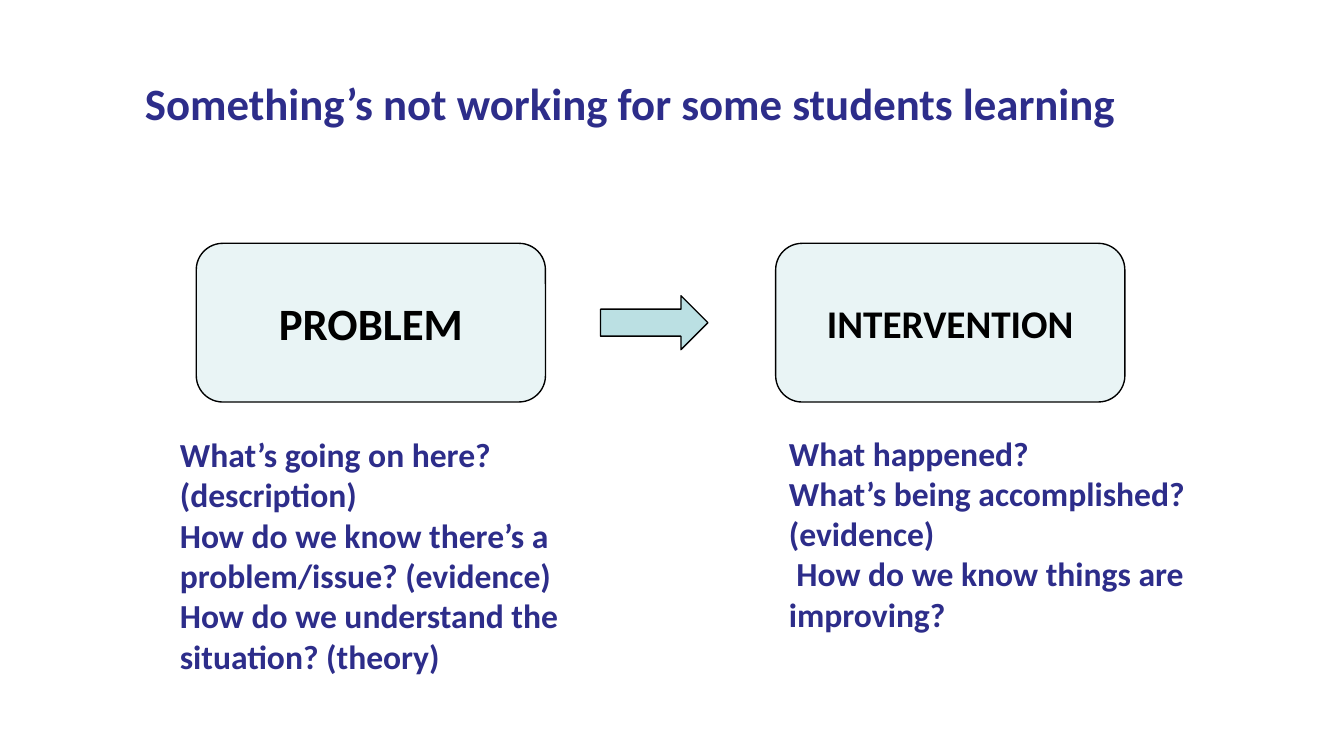
from pptx import Presentation
from pptx import util as u
from pptx.dml.color import RGBColor
from pptx.enum import shapes, text

NAVY, BLACK, PALE, TEAL = "2D2D8A", "000000", "E9F4F5", "BBE0E3"

# Content
TITLE = "Something’s not working for some students learning"
STAGES = [  # label, label size, box left
    ("PROBLEM", 24, 3.71),
    ("INTERVENTION", 21, 14.66),
]
QUESTIONS = [  # left, top, width, height, paragraphs
    (3.15, 8.08, 7.8, 5.51, [
        "What’s going on here? (description)",
        "How do we know there’s a problem/issue? (evidence)",
        "How do we understand the situation? (theory)",
    ]),
    (14.66, 8.05, 8.99, 4.88, [
        "What happened?",
        "What’s being accomplished? (evidence)",
        " How do we know things are improving?",
    ]),
]
BOX_TOP, BOX_W, BOX_H = 4.6, 6.6, 3.0
ARROW_LEFT, ARROW_W, ARROW_H = 11.35, 2.03, 1.02


def rgb(value):
    return RGBColor.from_string(value)


def write(sp, lines, size=18, color=NAVY, align=text.PP_ALIGN.LEFT,
          anchor=text.MSO_ANCHOR.TOP, wrap=True):
    tf = sp.text_frame
    tf.word_wrap = wrap
    tf.vertical_anchor = anchor
    for i, line in enumerate(lines):
        p = tf.add_paragraph() if i else tf.paragraphs[0]
        p.alignment = align
        r = p.add_run()
        r.text = line
        r.font.name, r.font.size, r.font.bold = "Calibri", u.Pt(size), True
        r.font.color.rgb = rgb(color)


def add_text(s, left, top, width, height, lines, **fmt):
    sp = s.shapes.add_textbox(u.Cm(left), u.Cm(top), u.Cm(width), u.Cm(height))
    write(sp, lines, **fmt)


def add_box(s, kind, left, top, width, height, fill):
    sp = s.shapes.add_shape(kind, u.Cm(left), u.Cm(top), u.Cm(width), u.Cm(height))
    sp.shadow.inherit = False
    sp.fill.solid()
    sp.fill.fore_color.rgb = rgb(fill)
    sp.line.color.rgb = rgb(BLACK)
    sp.line.width = u.Pt(0.75)
    return sp


prs = Presentation()
prs.slide_width, prs.slide_height = u.Cm(25.4), u.Cm(14.29)
s = prs.slides.add_slide(prs.slide_layouts[6])

# Stage boxes
for label, size, left in STAGES:
    sp = add_box(s, shapes.MSO_SHAPE.ROUNDED_RECTANGLE, left, BOX_TOP, BOX_W, BOX_H, PALE)
    write(sp, [label], size=size, color=BLACK, align=text.PP_ALIGN.CENTER,
          anchor=text.MSO_ANCHOR.MIDDLE, wrap=False)

# Arrow, centred on the height of the boxes
add_box(s, shapes.MSO_SHAPE.RIGHT_ARROW, ARROW_LEFT,
        BOX_TOP + (BOX_H - ARROW_H) / 2, ARROW_W, ARROW_H, TEAL)

# Title and questions
add_text(s, 2.49, 1.3, 20.42, 2.44, [TITLE], size=24)
for left, top, width, height, lines in QUESTIONS:
    add_text(s, left, top, width, height, lines)

prs.save("out.pptx")
